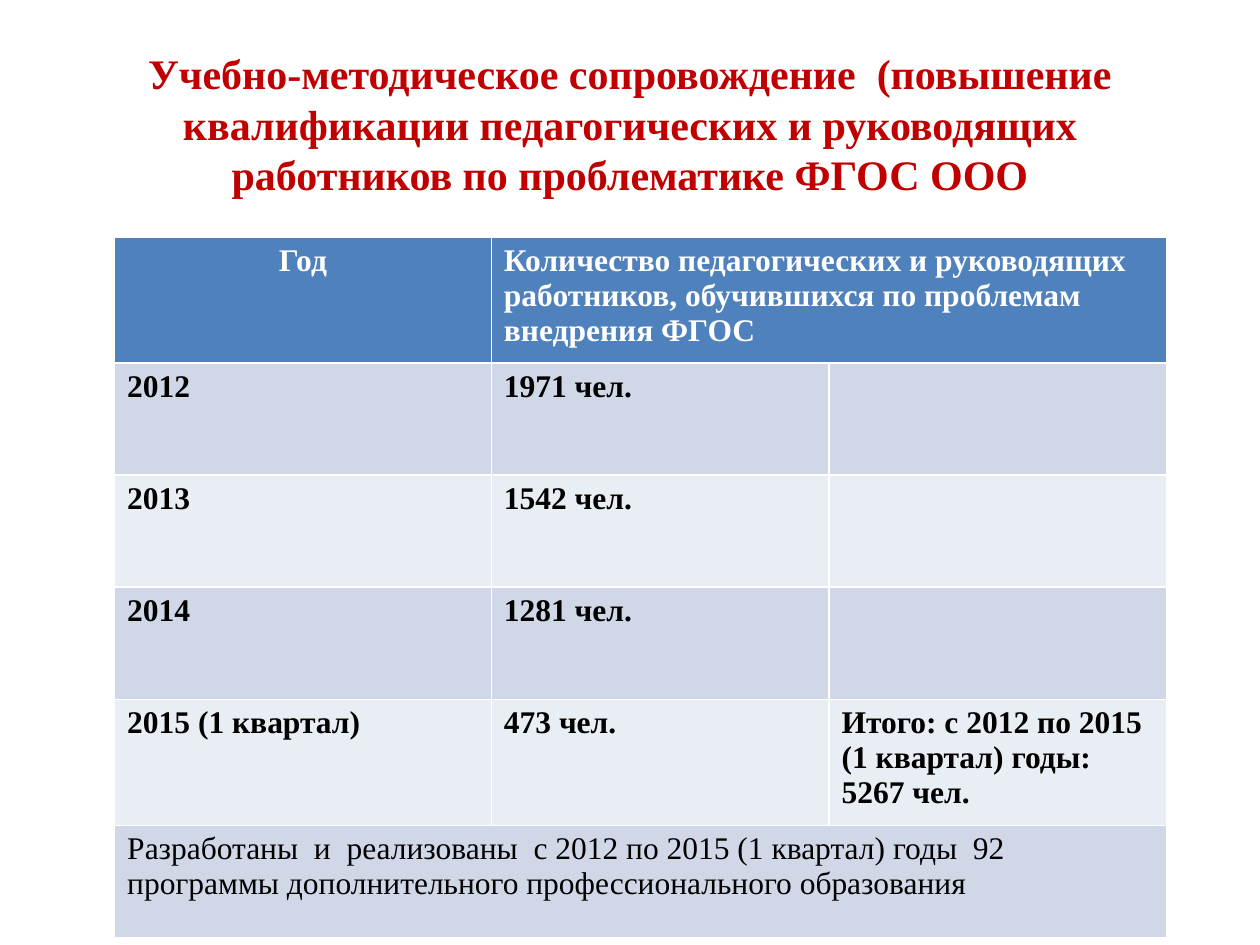
import pptx
import pptx.util
import pptx.dml.color
import pptx.enum.text

Inches, Pt = pptx.util.Inches, pptx.util.Pt
RGB = pptx.dml.color.RGBColor
CENTER = pptx.enum.text.PP_ALIGN.CENTER
LEFT = pptx.enum.text.PP_ALIGN.LEFT

RED = RGB(0xC0, 0x00, 0x00)
WHITE = RGB(0xFF, 0xFF, 0xFF)
BLACK = RGB(0x00, 0x00, 0x00)
HEADER_BLUE = RGB(0x4F, 0x81, 0xBD)
BANDS = RGB(0xE9, 0xED, 0xF4), RGB(0xD0, 0xD8, 0xE8)
FONT = "Times New Roman"

TITLE = ("Учебно-методическое сопровождение  (повышение квалификации "
         "педагогических и руководящих работников по проблематике ФГОС ООО")
ROWS = [
    ("Год", "Количество педагогических и руководящих работников, "
            "обучившихся по проблемам внедрения ФГОС", ""),
    ("2012", "1971 чел.", ""),
    ("2013", "1542 чел.", ""),
    ("2014", "1281 чел.", ""),
    ("2015 (1 квартал)", "473 чел.",
     "Итого: с 2012 по 2015  (1 квартал) годы: 5267 чел."),
    ("Разработаны  и  реализованы  с 2012 по 2015 (1 квартал) годы  92   "
     "программы дополнительного профессионального образования", "", ""),
]
LAST = len(ROWS) - 1
MERGES = [((0, 1), (0, 2)), ((LAST, 0), (LAST, 2))]
COLUMN_WIDTHS = 2.99, 2.68, 2.68
ROW_HEIGHT = 0.89


def write(frame, text, size, color, bold=True, align=LEFT):
    paragraph = frame.paragraphs[0]
    paragraph.alignment = align
    run = paragraph.add_run()
    run.text = text
    run.font.color.rgb = color
    for key, value in {"name": FONT, "size": Pt(size), "bold": bold}.items():
        setattr(run.font, key, value)


deck = pptx.Presentation()
deck.slide_width, deck.slide_height = Inches(10), Inches(7.5)
slide = deck.slides.add_slide(deck.slide_layouts[6])

title = slide.shapes.add_textbox(
    Inches(0.5), Inches(0.16), Inches(9), Inches(1.64)).text_frame
title.word_wrap = True
title.vertical_anchor = pptx.enum.text.MSO_ANCHOR.MIDDLE
write(title, TITLE, 24, RED, align=CENTER)

# The default table style supplies the white cell borders.
table = slide.shapes.add_table(
    len(ROWS), len(COLUMN_WIDTHS), Inches(0.91), Inches(1.88),
    Inches(sum(COLUMN_WIDTHS)), Inches(ROW_HEIGHT * len(ROWS))).table
for column, width in zip(table.columns, COLUMN_WIDTHS):
    column.width = Inches(width)
for start, end in MERGES:
    table.cell(*start).merge(table.cell(*end))

for r, row in enumerate(ROWS):
    for c, text in enumerate(row):
        cell = table.cell(r, c)
        cell.fill.solid()
        cell.fill.fore_color.rgb = BANDS[r % 2] if r else HEADER_BLUE
        if text:
            write(cell.text_frame, text, 18, BLACK if r else WHITE,
                  bold=r != LAST, align=CENTER if (r, c) == (0, 0) else LEFT)

deck.save("out.pptx")
